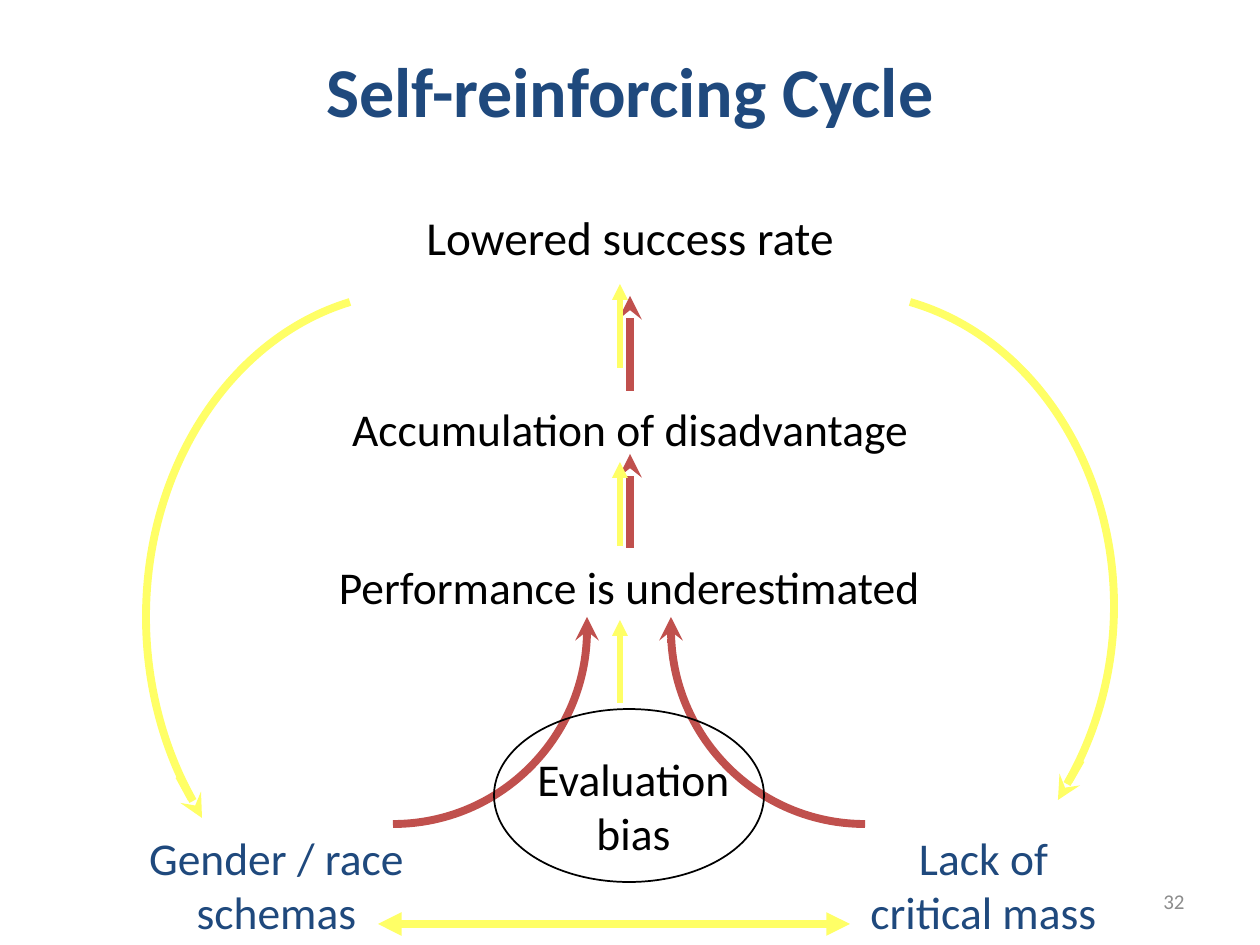
from lxml import etree
from pptx import Presentation
from pptx.dml.color import RGBColor
from pptx.enum.shapes import MSO_CONNECTOR, MSO_SHAPE
from pptx.enum.text import MSO_ANCHOR, PP_ALIGN
from pptx.oxml.ns import qn
from pptx.util import Emu, Pt

STRAIGHT = MSO_CONNECTOR.STRAIGHT
OVAL = MSO_SHAPE.OVAL
MIDDLE, BOTTOM = MSO_ANCHOR.MIDDLE, MSO_ANCHOR.BOTTOM
CENTER, RIGHT = PP_ALIGN.CENTER, PP_ALIGN.RIGHT

BLACK = RGBColor(0x00, 0x00, 0x00)
NAVY = RGBColor(0x1F, 0x49, 0x7D)
RED = RGBColor(0xC0, 0x50, 0x4D)
YELLOW = RGBColor(0xFF, 0xFF, 0x66)
GRAY = RGBColor(0x8C, 0x8C, 0x8C)

FONT = "Calibri"
SCALE = 914400 / 126
THICK, THIN = 4.5, 3

TITLE = ("Self-reinforcing Cycle", (63, 0, 1134, 179))
LABELS = [
    ("Lowered success rate", (320, 200, 620, 73), 27, BLACK, MIDDLE, CENTER),
    ("Evaluation bias", (502, 744, 263, 122), 26, BLACK, BOTTOM, CENTER),
    ("Performance is underestimated", (300, 553, 659, 67), 26, BLACK, BOTTOM, CENTER),
    ("Accumulation of disadvantage", (245, 395, 771, 67), 26, BLACK, BOTTOM, CENTER),
    ("Gender / race schemas", (136, 769, 281, 176), 26, NAVY, BOTTOM, CENTER),
    ("Lack of critical mass", (843, 823, 281, 122), 26, NAVY, BOTTOM, CENTER),
    ("32", (903, 876, 294, 50), 12, GRAY, MIDDLE, RIGHT),
]
BIAS_OVAL = (494, 709, 270, 173)

CURVES = [
    (RED, [(393, 824), (500, 824), (587, 737), (587, 630)], (393, 630)),
    (RED, [(865, 824), (758, 824), (671, 737), (671, 630)], (865, 630)),
    (YELLOW, [(910, 302), (1029, 336), (1114, 462), (1114, 606),
              (1114, 670), (1097, 732), (1067, 784)], (845, 606)),
    (YELLOW, [(350, 302), (231, 338), (146, 467), (146, 617),
              (146, 683), (163, 748), (193, 801)], (415, 617)),
]
CURVE_TIPS = [
    (RED, (587, 634), (587, 617)),
    (RED, (671, 643), (671, 617)),
    (YELLOW, (1081, 760), (1058, 800)),
    (YELLOW, (179, 776), (202, 818)),
]
RED_RISES = [(548, 454), (391, 296)]
YELLOW_RISES = [(703, 620), (546, 462), (368, 284)]
RED_X, YELLOW_X = 630, 620
BASE_ARROW = ((850, 924), (378, 924))


def px(value):
    return Emu(round(value * SCALE))


def place(shape, box):
    shape.left, shape.top, shape.width, shape.height = map(px, box)


def write(shape, text, size, color, anchor, align, bold=False):
    frame = shape.text_frame
    frame.text = text
    frame.word_wrap = True
    frame.vertical_anchor = anchor
    paragraph = frame.paragraphs[0]
    paragraph.alignment = align
    font = paragraph.runs[0].font
    font.name, font.size, font.bold = FONT, Pt(size), bold
    font.color.rgb = color


def outline(shape, color, width):
    shape.line.color.rgb = color
    shape.line.width = Pt(width)


def add_curve(slide, color, controls, pivot):
    builder = slide.shapes.build_freeform(*controls[0], scale=SCALE)
    builder.add_line_segments(controls[1:] + [pivot], close=False)
    curve = builder.convert_to_shape()
    curve.shadow.inherit = False
    curve.fill.background()
    outline(curve, color, THICK)

    outline_path = next(curve._element.iter(qn("a:path")))
    segments = outline_path.findall(qn("a:lnTo"))
    for segment in segments:
        outline_path.remove(segment)
    for first in range(0, len(controls) - 1, 3):
        bezier = etree.SubElement(outline_path, qn("a:cubicBezTo"))
        bezier.extend([segment[0] for segment in segments[first:first + 3]])


def add_arrow(slide, color, start, end, width=THICK, head="stealth", both=False):
    arrow = slide.shapes.add_connector(STRAIGHT, *map(px, start + end))
    outline(arrow, color, width)
    line = arrow.line._get_or_add_ln()
    for tag in ("a:headEnd", "a:tailEnd") if both else ("a:tailEnd",):
        etree.SubElement(line, qn(tag), type=head)
    etree.SubElement(arrow._element.spPr, qn("a:effectLst"))


def main():
    deck = Presentation()
    deck.slide_width, deck.slide_height = px(1260), px(945)
    slide = deck.slides.add_slide(deck.slide_layouts[5])

    title_text, title_box = TITLE
    place(slide.shapes.title, title_box)
    write(slide.shapes.title, title_text, 40, NAVY, MIDDLE, CENTER, bold=True)

    for color, controls, pivot in CURVES:
        add_curve(slide, color, controls, pivot)
    for color, start, end in CURVE_TIPS:
        add_arrow(slide, color, start, end)

    oval = slide.shapes.add_shape(OVAL, *map(px, BIAS_OVAL))
    oval.shadow.inherit = False
    oval.fill.background()
    outline(oval, BLACK, 1)

    for text, box, *style in LABELS:
        write(slide.shapes.add_textbox(*map(px, box)), text, *style)

    for bottom, top in RED_RISES:
        add_arrow(slide, RED, (RED_X, bottom), (RED_X, top))
    add_arrow(slide, YELLOW, *BASE_ARROW, head="triangle", both=True)
    for bottom, top in YELLOW_RISES:
        add_arrow(slide, YELLOW, (YELLOW_X, bottom), (YELLOW_X, top), THIN, "triangle")

    deck.save("out.pptx")


if __name__ == "__main__":
    main()
